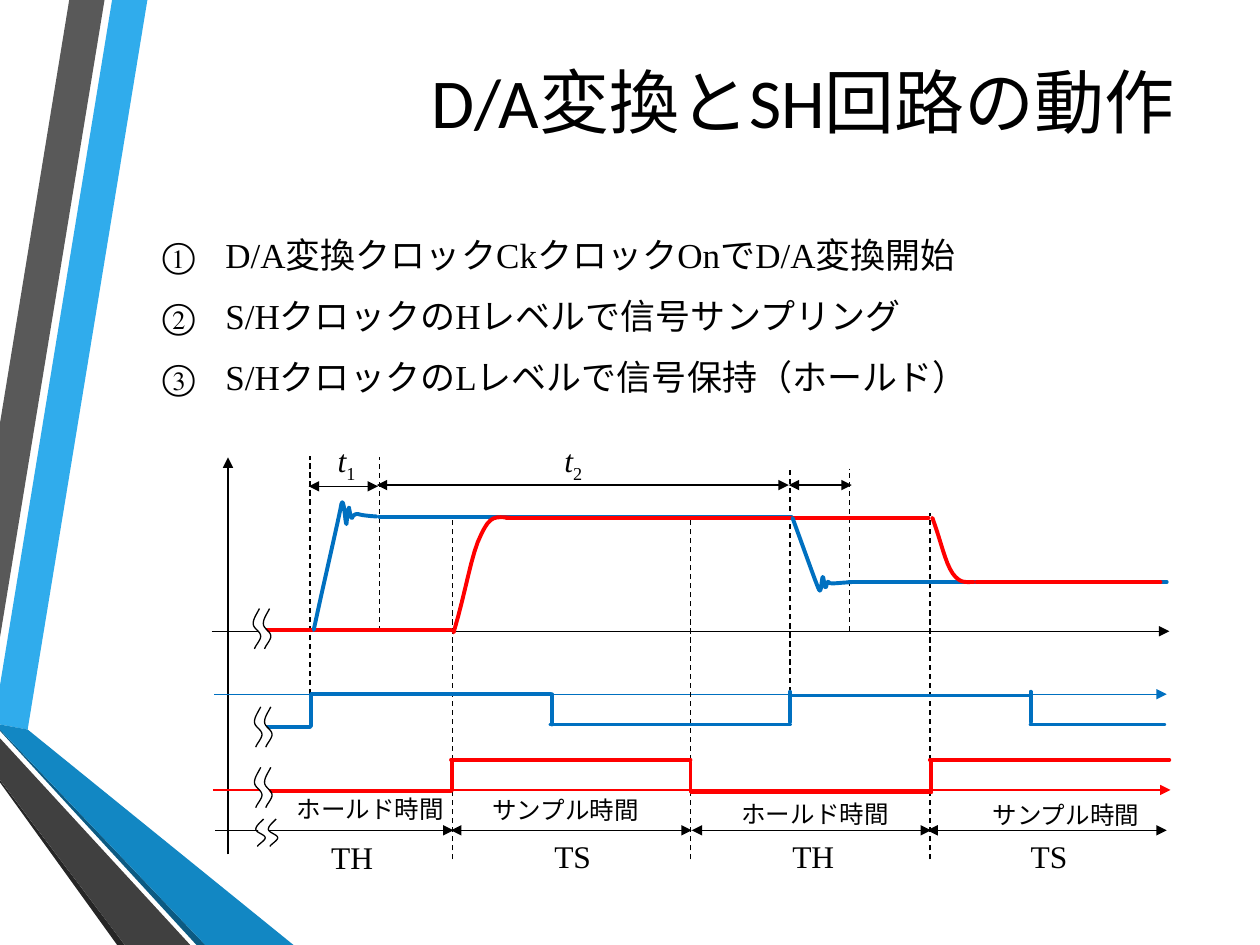
from lxml.etree import SubElement
from pptx import Presentation
from pptx.dml.color import RGBColor
from pptx.enum.dml import MSO_LINE
from pptx.enum.shapes import MSO_CONNECTOR
from pptx.enum.text import MSO_ANCHOR, PP_ALIGN
from pptx.oxml.ns import qn
from pptx.util import Inches, Pt

THEME = {
    "black": "000000", "white": "FFFFFF", "blue": "0070C0", "red": "FF0000",
    "thin": 0.75, "thick": 2.25,
    "title": {"name": "Calibri", "size": Pt(40)},
    "body": {"name": "Times New Roman", "size": Pt(20)},
    "symbol": {"name": "Times New Roman", "size": Pt(18)},
    "caption": {"name": "Times New Roman", "size": Pt(14)},
}

TITLE = "D/A変換とSH回路の動作"
STEPS = [
    "D/A変換クロックCkクロックOnでD/A変換開始",
    "S/HクロックのHレベルで信号サンプリング",
    "S/HクロックのLレベルで信号保持（ホールド）",
]

# Side ribbons: colour, corner points
RIBBONS = [
    ("30ACEC", [(0, 5.44), (0, 5.75), (0.22, 5.79), (1.17, 0), (0.89, 0)]),
    ("595959", [(0.83, 0), (0.55, 0), (0, 3.36), (0, 5.06)]),
    ("262626", [(0, 6.19), (0, 6.21), (0.93, 7.5), (0.99, 7.5)]),
    ("0C5A82", [(0, 5.79), (0, 5.8), (1.56, 7.5), (1.63, 7.5)]),
    ("1287C3", [(0, 5.79), (1.63, 7.5), (2.33, 7.5), (0.22, 5.79), (0, 5.75)]),
    ("404040", [(0, 6.19), (0.99, 7.5), (1.51, 7.5), (0, 5.86)]),
]

# Axes: colour, start, end
AXES = [
    ("black", (1.68, 5.01), (9.28, 5.01)),
    ("black", (1.81, 6.78), (1.81, 3.63)),
    ("red", (1.69, 6.27), (9.29, 6.27)),
    ("blue", (1.7, 5.51), (9.26, 5.51)),
]
# Dashed guides: x, bottom, top
GUIDES = [
    (2.46, 5.51, 3.62), (3.01, 5.01, 3.63), (3.59, 6.82, 4.11), (5.48, 6.82, 4.1),
    (7.38, 6.82, 4.07), (6.27, 5.49, 3.72), (6.74, 5.01, 3.72),
]
# Time spans: left, right, y, arrowhead on the left too
SPANS = [
    (2.45, 3, 3.86, True), (2.99, 6.26, 3.85, True), (6.26, 6.76, 3.85, True),
    (1.71, 3.6, 6.59, False), (3.58, 5.49, 6.59, True),
    (5.49, 7.39, 6.59, True), (7.36, 9.26, 6.59, True),
]
# Signal levels: colour, left, right, y
LEVELS = [
    ("red", 2.12, 3.58, 6.28), ("red", 3.58, 5.48, 6.03),
    ("red", 5.49, 7.39, 6.29), ("red", 7.38, 9.28, 6.03),
    ("blue", 2.07, 2.46, 5.77), ("blue", 2.47, 4.37, 5.51),
    ("blue", 4.37, 6.27, 5.75), ("blue", 6.28, 8.18, 5.52),
    ("blue", 8.18, 9.24, 5.75), ("blue", 3.01, 6.28, 4.1),
    ("blue", 6.74, 9.26, 4.62), ("red", 4.02, 7.37, 4.11),
    ("red", 7.75, 9.21, 4.62), ("red", 2.12, 3.58, 5),
]
# Clock edges: colour, x, top, bottom
EDGES = [
    ("red", 3.59, 6.03, 6.27), ("red", 5.48, 6.05, 6.28), ("red", 7.39, 6.05, 6.28),
    ("blue", 2.47, 5.52, 5.76), ("blue", 4.38, 5.51, 5.75),
    ("blue", 6.27, 5.49, 5.73), ("blue", 8.18, 5.49, 5.73),
]
# Transitions as cubic curves: start, then three points for each segment
TRANSITIONS = [
    ("blue", [(2.49, 5), (2.56, 4.67), (2.7, 4.07), (2.71, 4),
              (2.73, 3.93), (2.74, 4.16), (2.75, 4.16), (2.75, 4.17), (2.76, 4.04), (2.77, 4.03),
              (2.77, 4.02), (2.78, 4.1), (2.79, 4.11), (2.8, 4.12), (2.79, 4.09), (2.83, 4.08),
              (2.86, 4.08), (2.84, 4.09), (2.99, 4.1)]),
    ("blue", [(6.29, 4.11), (6.36, 4.3), (6.48, 4.64), (6.5, 4.68),
              (6.52, 4.72), (6.52, 4.59), (6.53, 4.58), (6.54, 4.58), (6.54, 4.66), (6.55, 4.66),
              (6.56, 4.67), (6.56, 4.62), (6.57, 4.62), (6.58, 4.61), (6.57, 4.63), (6.6, 4.63),
              (6.64, 4.63), (6.62, 4.63), (6.76, 4.62)]),
    ("red", [(3.6, 5.02), (3.7, 4.69), (3.74, 4.39), (3.82, 4.24),
             (3.89, 4.09), (3.93, 4.1), (4.05, 4.11)]),
    ("red", [(7.4, 4.11), (7.47, 4.3), (7.5, 4.46), (7.56, 4.55),
             (7.62, 4.63), (7.65, 4.62), (7.73, 4.62)]),
]
# Axis break: one wave, its offsets, the gap it covers, and places (x, y, x scale, y scale)
BREAK_WAVE = [(0.05, 0), (0.03, 0.04), (0, 0.08), (0, 0.12),
              (0, 0.16), (0.06, 0.18), (0.06, 0.22), (0.06, 0.25), (0.02, 0.29), (0.01, 0.32)]
BREAK_GAP = [(0.01, 0.12), (0.03, 0.17), (0.07, 0.2), (0.05, 0.26), (0.11, 0.26),
             (0.13, 0.21), (0.07, 0.12), (0.08, 0.08), (0.01, 0.09)]
BREAKS = [(2.01, 4.83, 1, 1), (2.02, 5.61, 1, 1), (2.02, 6.09, 1, 1), (2.03, 6.5, 1.25, 0.68)]

# Labels: left, top, width, style, runs of (text, extra format, subscript)
SYMBOLS = [
    (2.49, 3.45, 0.52, "symbol", [("t", {"italic": True}, False), ("1", {}, True)]),
    (4.29, 3.45, 0.52, "symbol", [("t", {"italic": True}, False), ("2", {}, True)]),
]
PHASES = [("TH", 2.51, 6.6), ("TS", 4.26, 6.59), ("TH", 6.17, 6.59), ("TS", 8.04, 6.59)]
CAPTIONS = [("ホールド時間", 2.22, 6.25), ("サンプル時間", 3.77, 6.26),
            ("ホールド時間", 5.75, 6.29), ("サンプル時間", 7.74, 6.3)]
LABELS = (SYMBOLS
          + [(x, y, 0.57, "symbol", [(text, {}, False)]) for text, x, y in PHASES]
          + [(x, y, 1.44, "caption", [(text, {}, False)]) for text, x, y in CAPTIONS])


def color(name):
    return RGBColor.from_string(THEME.get(name, name))


def style_line(shape, name, width):
    shape.line.fill.solid()
    shape.line.fill.fore_color.rgb = color(name)
    shape.line.width = Pt(width)
    outline = shape._element.spPr.find(qn("a:ln"))
    if width == THEME["thick"]:
        outline.set("cap", "rnd")
    return outline


def add_line(slide, name, start, end, width=THEME["thin"], dashed=False, arrows=()):
    connector = slide.shapes.add_connector(
        MSO_CONNECTOR.STRAIGHT, *(Inches(value) for value in (*start, *end)))
    outline = style_line(connector, name, width)
    if dashed:
        connector.line.dash_style = MSO_LINE.DASH
    for arrow in arrows:
        SubElement(outline, qn(f"a:{arrow}"), type="triangle")
    SubElement(connector._element.spPr, qn("a:effectLst"))


def add_outline(slide, points, fill=None, line=None, width=THEME["thin"]):
    corners = [(Inches(x), Inches(y)) for x, y in points]
    builder = slide.shapes.build_freeform(*corners[0])
    builder.add_line_segments(corners[1:], close=fill is not None)
    shape = builder.convert_to_shape()
    shape.shadow.inherit = False
    if fill:
        shape.fill.solid()
        shape.fill.fore_color.rgb = color(fill)
        shape.line.fill.background()
    else:
        shape.fill.background()
        style_line(shape, line, width)


def trace_curve(points, steps=8):
    traced = [points[0]]
    for first in range(0, len(points) - 1, 3):
        controls = points[first:first + 4]
        for step in range(1, steps + 1):
            t = step / steps
            weights = ((1 - t) ** 3, 3 * t * (1 - t) ** 2, 3 * t * t * (1 - t), t ** 3)
            traced.append(tuple(sum(w * point[axis] for w, point in zip(weights, controls))
                                for axis in (0, 1)))
    return traced


def add_text_box(slide, left, top, width, height, anchor=MSO_ANCHOR.TOP):
    box = slide.shapes.add_textbox(*(Inches(value) for value in (left, top, width, height)))
    box.text_frame.word_wrap = True
    box.text_frame.vertical_anchor = anchor
    return box.text_frame


def add_run(paragraph, text, style, extra=None):
    run = paragraph.add_run()
    run.text = text
    for attribute, value in {**THEME[style], **(extra or {})}.items():
        setattr(run.font, attribute, value)
    run.font.color.rgb = color("black")
    return run


def add_steps(slide):
    frame = add_text_box(slide, 1.19, 1.8, 8.58, 0.71)
    for index, text in enumerate(STEPS):
        paragraph = frame.add_paragraph() if index else frame.paragraphs[0]
        paragraph.space_before, paragraph.space_after = Pt(5), Pt(6)
        properties = paragraph._p.get_or_add_pPr()
        properties.set("marL", str(Inches(0.5)))
        properties.set("indent", str(-Inches(0.5)))
        SubElement(properties, qn("a:buAutoNum"), type="circleNumDbPlain")
        add_run(paragraph, text, "body")


def main():
    presentation = Presentation()
    presentation.slide_width, presentation.slide_height = Inches(10), Inches(7.5)
    slide = presentation.slides.add_slide(presentation.slide_layouts[6])

    # Ribbons, title and numbered steps
    for fill, points in RIBBONS:
        add_outline(slide, points, fill=fill)
    title = add_text_box(slide, 0.92, 0.02, 8.5, 1.55, MSO_ANCHOR.MIDDLE).paragraphs[0]
    title.alignment = PP_ALIGN.RIGHT
    add_run(title, TITLE, "title")
    add_steps(slide)

    # Axes, guides and time spans
    for name, start, end in AXES:
        add_line(slide, name, start, end, arrows=["tailEnd"])
    for x, bottom, top in GUIDES:
        add_line(slide, "black", (x, bottom), (x, top), dashed=True)
    for left, right, y, both in SPANS:
        arrows = ["headEnd", "tailEnd"] if both else ["tailEnd"]
        add_line(slide, "black", (left, y), (right, y), arrows=arrows)

    # Signals
    for name, left, right, y in LEVELS:
        add_line(slide, name, (left, y), (right, y), THEME["thick"])
    for name, x, top, bottom in EDGES:
        add_line(slide, name, (x, top), (x, bottom), THEME["thick"])
    for name, points in TRANSITIONS:
        add_outline(slide, trace_curve(points), line=name, width=THEME["thick"])

    # Labels
    for left, top, width, style, runs in LABELS:
        paragraph = add_text_box(slide, left, top, width, 0.4).paragraphs[0]
        paragraph.alignment = PP_ALIGN.CENTER
        for text, extra, subscript in runs:
            run = add_run(paragraph, text, style, extra)
            if subscript:
                run._r.get_or_add_rPr().set("baseline", "-25000")

    # Axis breaks
    for left, top, scale_x, scale_y in BREAKS:
        def place(points, shift=0):
            return [(left + (x + shift) * scale_x, top + y * scale_y) for x, y in points]
        add_outline(slide, place(BREAK_GAP), fill="white")
        for shift in (0.08, 0):
            add_outline(slide, trace_curve(place(BREAK_WAVE, shift)), line="black")

    presentation.save("out.pptx")


if __name__ == "__main__":
    main()
